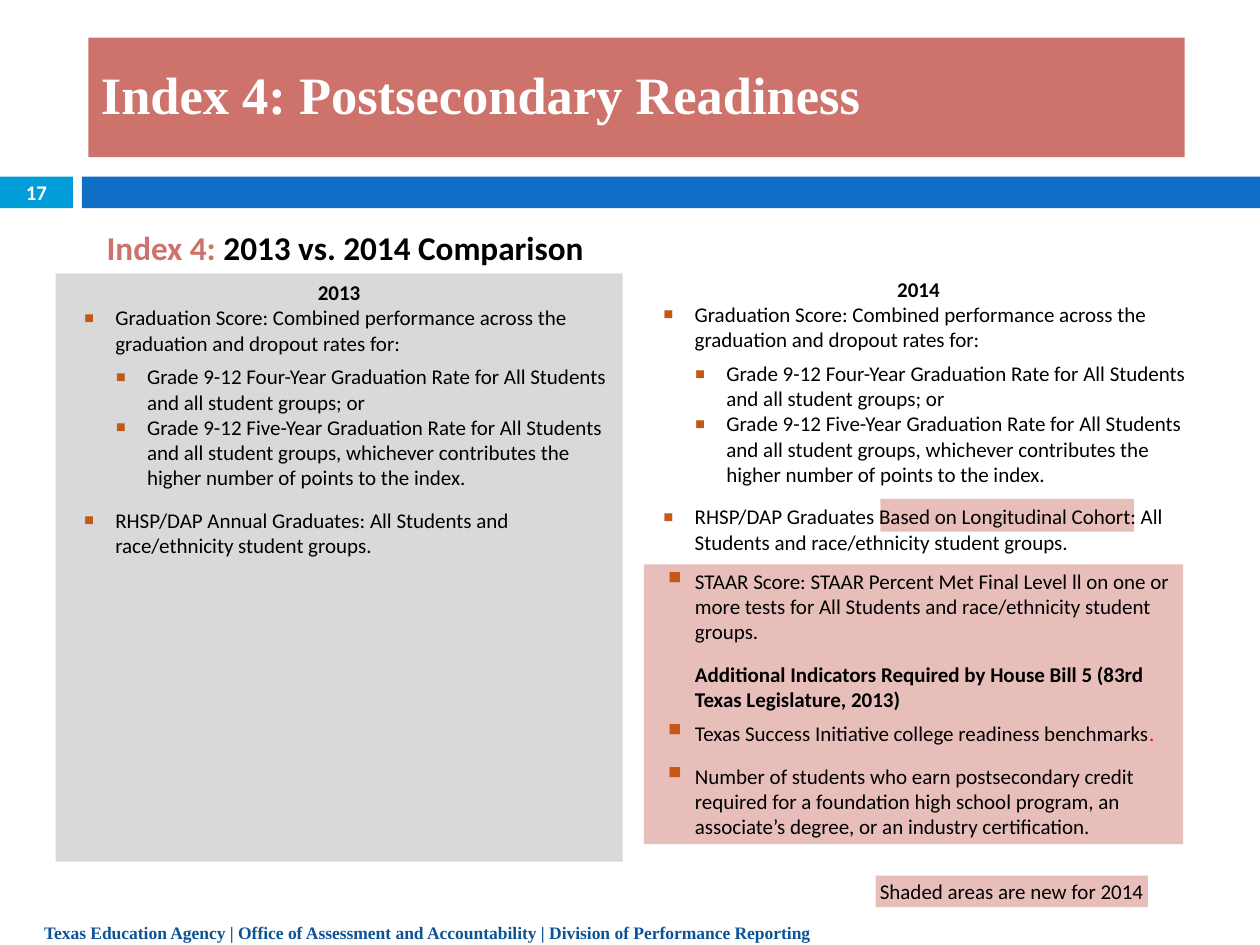
import pptx
import pptx.util
import pptx.dml.color
import pptx.enum.shapes
import pptx.enum.text
import lxml.etree
from pptx.util import Cm, Pt
from pptx.dml.color import RGBColor
from pptx.enum.text import PP_ALIGN, MSO_ANCHOR, MSO_AUTO_SIZE

WHITE = RGBColor(0xFF, 0xFF, 0xFF)
BLACK = RGBColor(0, 0, 0)
RED = RGBColor(0xFF, 0, 0)
CORAL = RGBColor(0xCD, 0x73, 0x6B)
PINK = RGBColor(0xE8, 0xBE, 0xBA)
GRAY = RGBColor(0xD9, 0xD9, 0xD9)
CYAN = RGBColor(0x00, 0x9D, 0xD9)
BLUE = RGBColor(0x0F, 0x6F, 0xC6)
NAVY = RGBColor(0x0B, 0x53, 0x95)
ORANGE = RGBColor(0xC4, 0x58, 0x16)

# Each line: kind, text, space after in points
GRADUATION = [
    ("item", "Graduation Score: Combined performance across the graduation and dropout rates for:", 5),
    ("subitem", "Grade 9-12 Four-Year Graduation Rate for All Students and all student groups; or", 0),
    ("subitem", "Grade 9-12 Five-Year Graduation Rate for All Students and all student groups, "
     "whichever contributes the higher number of points to the index.", 10),
]
LINES_2013 = [("heading", "2013", 0), *GRADUATION, (
    "item", "RHSP/DAP Annual Graduates: All Students and race/ethnicity student groups.", 0)]
LINES_2014 = [("heading", "2014", 0), *GRADUATION, (
    "item", "RHSP/DAP Graduates Based on Longitudinal Cohort: All Students and "
    "race/ethnicity student groups.", 0)]
LINES_NEW = [
    ("item", "STAAR Score: STAAR Percent Met Final Level ll on one or more tests for "
     "All Students and race/ethnicity student groups.", 10),
    ("note", "Additional Indicators Required by House Bill 5 (83rd Texas Legislature, 2013)", 5),
    ("item", "Texas Success Initiative college readiness benchmarks", 10),
    ("item", "Number of students who earn postsecondary credit required for a foundation "
     "high school program, an associate’s degree, or an industry certification.", 0),
]
# Left margin and first-line indent of each kind
INDENTS = {"heading": (0, 0), "item": (0.95, -0.64), "subitem": (1.59, -0.64), "note": (0.95, 0)}


def style(r, size, color, bold=False, font="Calibri"):
    r.font.size, r.font.bold, r.font.name = Pt(size), bold, font
    r.font.color.rgb = color


def fill_list(tf, lines):
    """Write the lines as paragraphs, with square bullets on items and subitems."""
    tf.word_wrap = True
    tf.auto_size = MSO_AUTO_SIZE.NONE
    tf.vertical_anchor = MSO_ANCHOR.TOP
    for i, (kind, text, after) in enumerate(lines):
        p = tf.paragraphs[0] if i == 0 else tf.add_paragraph()
        p.text = text
        p.alignment = PP_ALIGN.CENTER if kind == "heading" else PP_ALIGN.LEFT
        p.space_before, p.space_after = Pt(0), Pt(after)
        style(p.runs[0], 12, BLACK, kind in ("heading", "note"))
        pPr = p._p.get_or_add_pPr()
        margin, indent = INDENTS[kind]
        pPr.set("marL", str(Cm(margin)))
        pPr.set("indent", str(Cm(indent)))
        ns = pptx.oxml.ns.qn
        if indent:
            clr = lxml.etree.SubElement(pPr, ns("a:buClr"))
            lxml.etree.SubElement(clr, ns("a:srgbClr"), val=str(ORANGE))
            lxml.etree.SubElement(pPr, ns("a:buSzPct"), val="150000")
            lxml.etree.SubElement(pPr, ns("a:buChar"), char="▪")
        else:
            lxml.etree.SubElement(pPr, ns("a:buNone"))


prs = pptx.Presentation()
prs.slide_width, prs.slide_height = Cm(25.4), Cm(19.05)
s = prs.slides.add_slide(prs.slide_layouts[3])
title, left, right = s.placeholders

# Filled rectangles
rects = []
for x, y, w, h, color in [
    (0, 3.56, 1.47, 0.64, CYAN),
    (1.65, 3.56, 23.75, 0.64, BLUE),
    (17.75, 10.06, 5.11, 0.66, PINK),
    (17.65, 17.65, 5.49, 0.64, PINK),
    (12.98, 11.38, 10.87, 5.64, PINK),
]:
    sp = s.shapes.add_shape(pptx.enum.shapes.MSO_SHAPE.RECTANGLE, Cm(x), Cm(y), Cm(w), Cm(h))
    sp.shadow.inherit = False
    sp.fill.solid()
    sp.fill.fore_color.rgb = color
    sp.line.fill.background()
    rects.append(sp)
number, bar, highlight, legend, new_box = rects
s.shapes.element.insert(2, highlight.element)  # behind the 2014 list

# Title and the two lists
for sp, x, y, w, h, color in [
    (title, 1.78, 0.76, 22.1, 2.41, CORAL),
    (left, 1.12, 5.51, 11.43, 11.86, GRAY),
    (right, 12.8, 5.44, 11.43, 12.62, None),
]:
    sp.left, sp.top, sp.width, sp.height = Cm(x), Cm(y), Cm(w), Cm(h)
    if color is not None:
        sp.fill.solid()
        sp.fill.fore_color.rgb = color

tf = title.text_frame
tf.text = "Index 4: Postsecondary Readiness"
tf.auto_size = MSO_AUTO_SIZE.NONE
tf.vertical_anchor = MSO_ANCHOR.MIDDLE
tf.paragraphs[0].alignment = PP_ALIGN.LEFT
tf.paragraphs[0].line_spacing = Pt(32)
style(tf.paragraphs[0].runs[0], 30, WHITE, True, "Times New Roman")

fill_list(left.text_frame, LINES_2013)
fill_list(right.text_frame, LINES_2014)
fill_list(new_box.text_frame, LINES_NEW)
r = new_box.text_frame.paragraphs[2].add_run()
r.text = "."
style(r, 12, RED)

# Short labels inside rectangles
for sp, text, size, color, bold in [
    (number, "17", 11.9, WHITE, True),
    (legend, "Shaded areas are new for 2014", 12, BLACK, False),
]:
    tf = sp.text_frame
    tf.text = text
    tf.vertical_anchor = MSO_ANCHOR.MIDDLE
    tf.paragraphs[0].alignment = PP_ALIGN.CENTER
    style(tf.paragraphs[0].runs[0], size, color, bold)
for sp in (number, legend, new_box):
    tf = sp.text_frame
    tf.margin_left = tf.margin_right = tf.margin_top = tf.margin_bottom = Cm(0.08)

# Subtitle and footer
tf = s.shapes.add_textbox(Cm(1.9), Cm(4.45), Cm(10.26), Cm(1.07)).text_frame
p = tf.paragraphs[0]
for text, color in [("Index 4: ", CORAL), ("2013 vs. 2014 Comparison", BLACK)]:
    r = p.add_run()
    r.text = text
    style(r, 19, color, True)

tf = s.shapes.add_textbox(Cm(0.64), Cm(17.96), Cm(22.86), Cm(1.04)).text_frame
tf.word_wrap = True
p = tf.paragraphs[0]
p.text = ("Texas Education Agency | Office of Assessment and Accountability | "
          "Division of Performance Reporting")
p.line_spacing = Pt(26)
style(p.runs[0], 10, NAVY, True, "Times New Roman")

prs.save("out.pptx")
